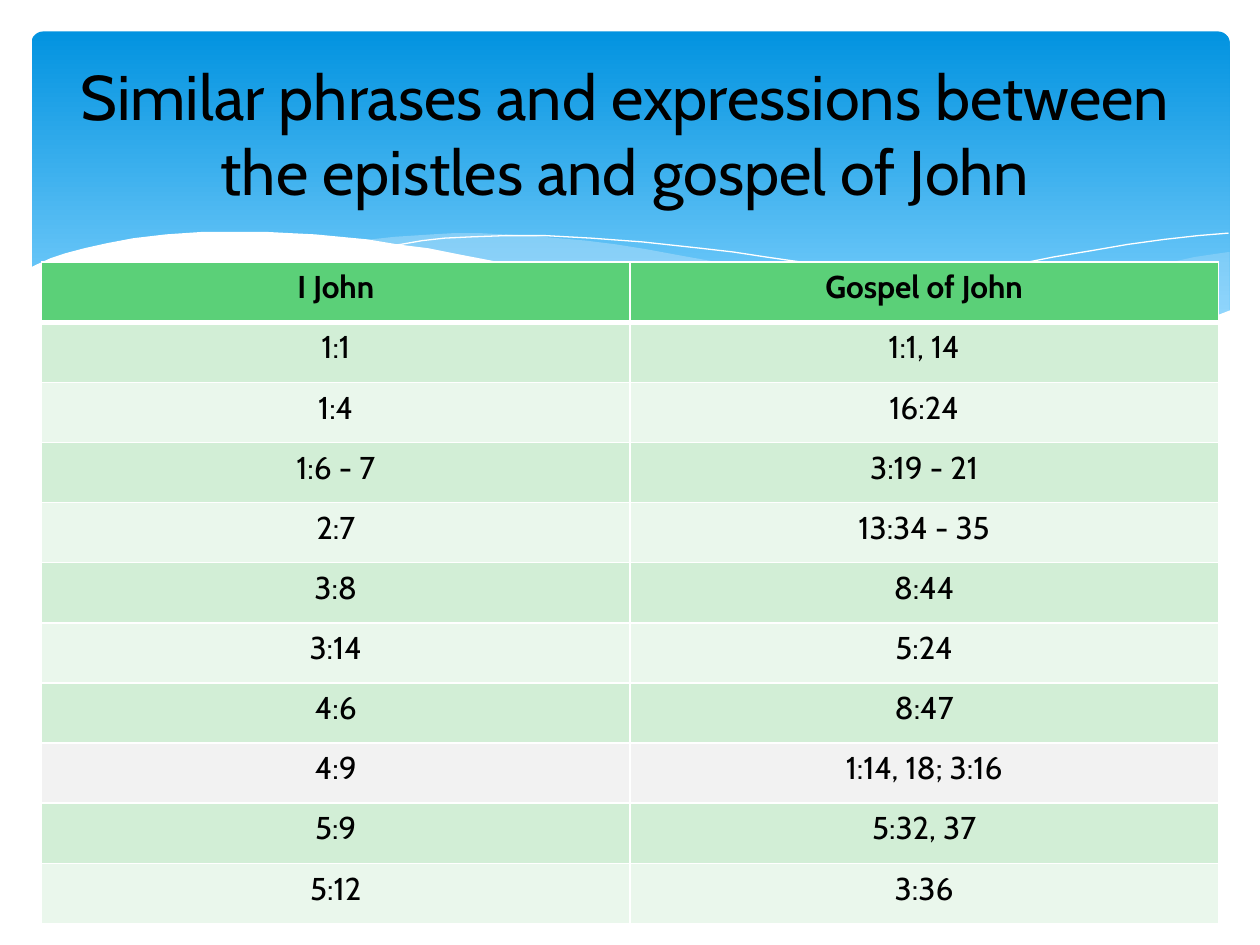
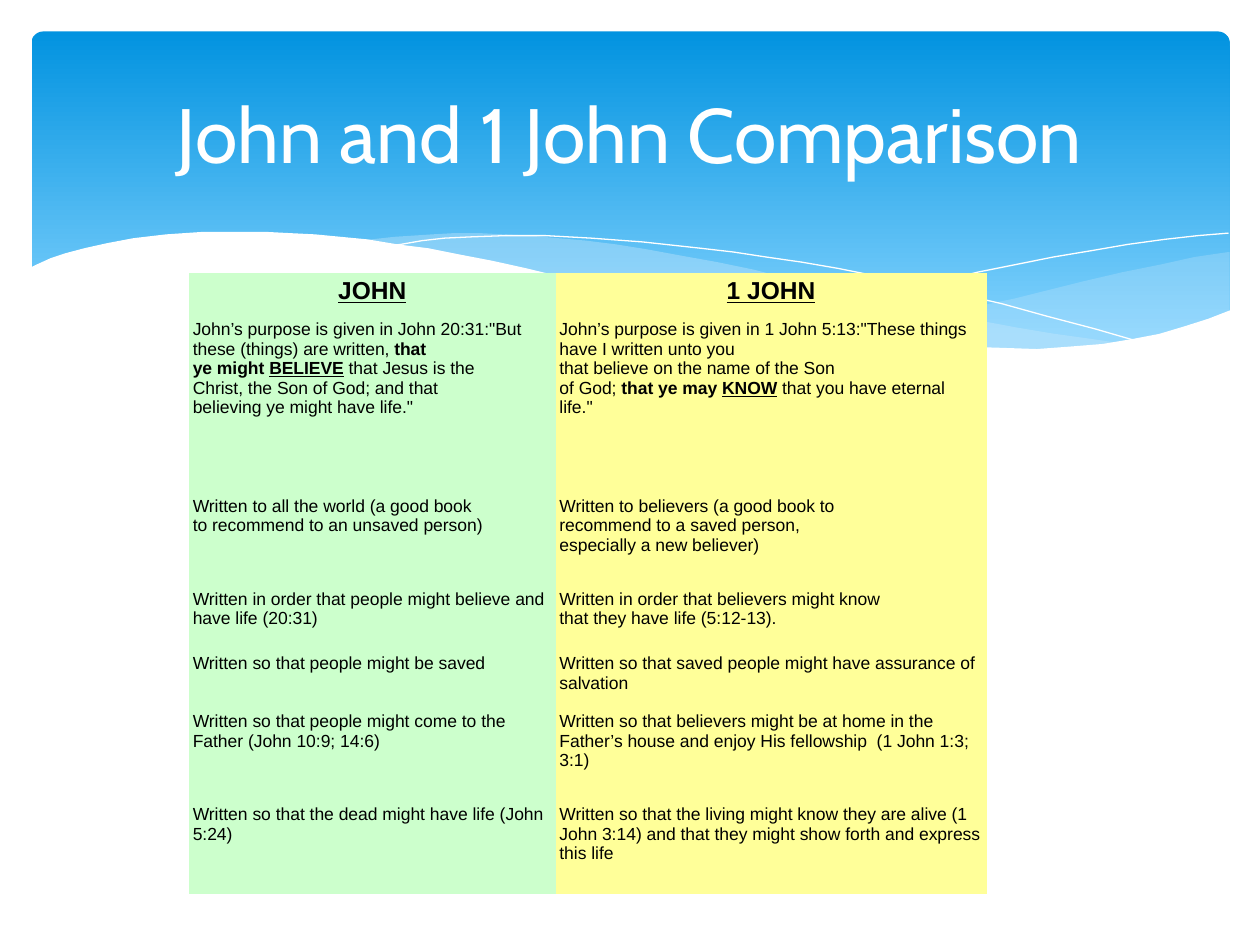
from copy import deepcopy
from dataclasses import dataclass

from lxml.etree import SubElement
from pptx import Presentation
from pptx.dml.color import RGBColor
from pptx.enum.shapes import MSO_SHAPE
from pptx.enum.text import MSO_ANCHOR, PP_ALIGN
from pptx.oxml.ns import qn
from pptx.util import Emu, Pt

PX = 9144
PLAIN_TABLE = "{2D5ABB26-0587-4C30-8999-92F81FD0307C}"


@dataclass(frozen=True)
class Theme:
    black: str = "000000"
    white: str = "FFFFFF"
    sky_top: str = "0293E0"
    sky_bottom: str = "83D3FE"
    mist: str = "C6E7FC"
    header_green: str = "5BD078"
    band_dark: str = "D2EED6"
    band_light: str = "EAF7EC"
    band_grey: str = "F2F2F2"
    john_green: str = "CCFFCC"
    epistle_yellow: str = "FFFF99"
    heading_font: str = "Cabin"
    reading_font: str = "Arial"
    long_title: int = 36
    short_title: int = 44
    verse_size: int = 18
    column_size: int = 14
    reading_size: int = 10


THEME = Theme()

RIGHT_SWELL = [
    (975, 200), (948, 204), (921, 210), (891, 216), (861, 223), (805, 237), (753, 248),
    (706, 257), (661, 265), (691, 269), (719, 272), (745, 275), (769, 277), (803, 278),
    (835, 277), (863, 275), (889, 272), (913, 267), (935, 262), (949, 257), (963, 252),
    (976, 247), (976, 200),
]
MIDDLE_SWELL = [
    (893, 273), (866, 269), (837, 265), (807, 260), (775, 254), (741, 247), (706, 240),
    (668, 231), (629, 222), (598, 214), (569, 208), (541, 203), (514, 198), (489, 194),
    (465, 191), (442, 189), (420, 187), (399, 186), (380, 185), (361, 185), (344, 186),
    (313, 188), (286, 191), (323, 196), (362, 203), (404, 211), (449, 222), (491, 232),
    (530, 240), (566, 248), (601, 255), (634, 261), (665, 266), (695, 270), (722, 274),
    (748, 276), (773, 277), (796, 278), (838, 278), (867, 276), (893, 273),
]
FALLING_LINE = [
    (309, 195), (318, 194), (335, 191), (353, 189), (374, 188), (401, 187), (433, 187),
    (469, 189), (510, 192), (556, 197), (582, 200), (608, 204), (636, 208), (665, 213),
    (695, 219), (727, 226), (760, 233), (795, 241), (831, 251), (869, 261), (907, 272),
]
RISING_LINE = [
    (613, 257), (653, 246), (695, 235), (748, 223), (776, 216), (806, 210), (836, 204),
    (866, 199), (895, 194), (924, 190), (951, 187), (975, 185),
]
WHITE_WAVE = [
    (977, 246), (959, 253), (940, 259), (920, 265), (899, 269), (875, 273), (850, 275),
    (823, 277), (793, 276), (761, 275), (726, 272), (688, 268), (648, 262), (603, 254),
    (555, 245), (503, 233), (447, 220), (418, 213), (391, 207), (365, 202), (340, 197),
    (316, 194), (292, 190), (271, 188), (250, 186), (230, 185), (211, 184), (161, 184),
    (132, 186), (106, 189), (85, 193), (67, 197), (52, 201), (40, 205), (29, 210),
    (23, 213), (23, 329), (977, 329),
]

VERSE_PAIRS = [
    ("I John", "Gospel of John"),
    ("1:1", "1:1, 14"),
    ("1:4", "16:24"),
    ("1:6 - 7", "3:19 - 21"),
    ("2:7", "13:34 - 35"),
    ("3:8", "8:44"),
    ("3:14", "5:24"),
    ("4:6", "8:47"),
    ("4:9", "1:14, 18; 3:16"),
    ("5:9", "5:32, 37"),
    ("5:12", "3:36"),
]
GREY_ROW = 8

PURPOSES = [
    (
        [
            ("John’s purpose is given in John 20:31:\"But these (things) are written, ", ""),
            ("that\nye might ", "b"),
            ("BELIEVE", "bu"),
            (" that Jesus is the\nChrist, the Son of God; and that\n"
             "believing ye might have life.\"", ""),
        ],
        [
            ("John’s purpose is given in 1 John 5:13:\"These things have I written unto you\n"
             "that believe on the name of the Son\nof God; ", ""),
            ("that ye may ", "b"),
            ("KNOW", "bu"),
            (" that you have eternal life.\"", ""),
        ],
    ),
    (
        [("Written to all the world (a good book\nto recommend to an unsaved person)", "")],
        [("Written to believers (a good book to\nrecommend to a saved person,\n"
          "especially a new believer)", "")],
    ),
    (
        [("Written in order that people might believe and have life (20:31)", "")],
        [("Written in order that believers might know\nthat they have life (5:12-13).", "")],
    ),
    (
        [("Written so that people might be saved", "")],
        [("Written so that saved people might have assurance of salvation", "")],
    ),
    (
        [("Written so that people might come to the Father (John 10:9; 14:6)", "")],
        [("Written so that believers might be at home in the Father’s house and enjoy "
          "His fellowship  (1 John 1:3; 3:1)", "")],
    ),
    (
        [("Written so that the dead might have life (John 5:24)", "")],
        [("Written so that the living might know they are alive (1 John 3:14) and that "
          "they might show forth and express this life", "")],
    ),
]
PURPOSE_COLUMNS = [291, 342]
PURPOSE_ROWS = [34, 140, 74, 51, 46, 74, 74]


def px(length):
    return Emu(length * PX)


def color(code):
    return RGBColor.from_string(code)


def add_spans(para, spans, font, size, ink):
    for text, style in spans:
        for number, line in enumerate(text.split("\n")):
            if number:
                para.add_line_break()
                para._p[-1].append(deepcopy(span._r.rPr))
            span = para.add_run()
            span.text = line
            span.font.name = font
            span.font.size = Pt(size)
            span.font.color.rgb = color(ink)
            span.font.bold = "b" in style
            span.font.underline = "u" in style


def add_title(page, text, left, width, size, ink):
    box = page.shapes.add_textbox(px(left), px(37), px(width), px(137))
    frame = box.text_frame
    frame.word_wrap = True
    frame.vertical_anchor = MSO_ANCHOR.MIDDLE
    para = frame.paragraphs[0]
    para.alignment = PP_ALIGN.CENTER
    add_spans(para, [(text, "")], THEME.heading_font, size, ink)


def add_outline(page, points, closed):
    builder = page.shapes.build_freeform(*points[0], scale=PX)
    builder.add_line_segments(points[1:], close=closed)
    shape = builder.convert_to_shape()
    shape.shadow.inherit = False
    return shape


def add_swell(page, points, fill, opacity=100):
    shape = add_outline(page, points, True)
    shape.line.fill.background()
    shape.fill.solid()
    shape.fill.fore_color.rgb = color(fill)
    if opacity < 100:
        paint = shape._element.spPr.find(qn("a:solidFill"))[0]
        SubElement(paint, qn("a:alpha"), val=str(opacity * 1000))


def add_thin_curve(page, points):
    shape = add_outline(page, points, False)
    shape.fill.background()
    shape.line.color.rgb = color(THEME.white)
    shape.line.width = Pt(0)


def add_sky(page):
    sky = page.shapes.add_shape(
        MSO_SHAPE.ROUNDED_RECTANGLE, px(25), px(25), px(951), px(270))
    sky.adjustments[0] = 0.034
    sky.shadow.inherit = False
    sky.line.fill.background()
    sky.fill.gradient()
    sky.fill.gradient_angle = 270
    stops = [(0, THEME.sky_top), (0.9, THEME.sky_bottom)]
    for stop, (position, code) in zip(sky.fill.gradient_stops, stops):
        stop.position = position
        stop.color.rgb = color(code)


def add_page(deck):
    page = deck.slides.add_slide(deck.slide_layouts[6])
    add_sky(page)
    add_swell(page, RIGHT_SWELL, THEME.mist, 29)
    add_swell(page, MIDDLE_SWELL, THEME.mist, 40)
    add_thin_curve(page, FALLING_LINE)
    add_thin_curve(page, RISING_LINE)
    add_swell(page, WHITE_WAVE, THEME.white)
    return page


def add_plain_table(page, rows, left, top, width, height):
    table = page.shapes.add_table(
        rows, 2, px(left), px(top), px(width), px(height)).table
    table.first_row = False
    table.horz_banding = False
    table._tbl.tblPr.find(qn("a:tableStyleId")).text = PLAIN_TABLE
    return table


def set_borders(cell, **widths):
    properties = cell._tc.get_or_add_tcPr()
    for side, width in widths.items():
        line = SubElement(properties, qn(f"a:ln{side}"), w=str(Pt(width)))
        paint = SubElement(line, qn("a:solidFill"))
        SubElement(paint, qn("a:srgbClr"), val=THEME.white)


def fill_cell(cell, spans, fill, font, size, centered):
    cell.fill.solid()
    cell.fill.fore_color.rgb = color(fill)
    para = cell.text_frame.paragraphs[0]
    para.alignment = PP_ALIGN.CENTER if centered else PP_ALIGN.LEFT
    add_spans(para, spans, font, size, THEME.black)


def verse_fill(row):
    if row == 0:
        return THEME.header_green
    if row == GREY_ROW:
        return THEME.band_grey
    return THEME.band_dark if row % 2 else THEME.band_light


def add_verse_table(page):
    table = add_plain_table(page, len(VERSE_PAIRS), 33, 208, 934, 525)
    for row, pair in enumerate(VERSE_PAIRS):
        for column, verse in enumerate(pair):
            cell = table.cell(row, column)
            set_borders(cell, L=1, R=1, T=3 if row == 1 else 1, B=1 if row else 3)
            fill_cell(cell, [(verse, "" if row else "b")], verse_fill(row),
                      THEME.heading_font, THEME.verse_size, True)


def add_purpose_table(page):
    rows = [([("JOHN", "bu")], [("1 JOHN", "bu")])] + PURPOSES
    table = add_plain_table(
        page, len(rows), 150, 217, sum(PURPOSE_COLUMNS), sum(PURPOSE_ROWS))
    for column, width in zip(table.columns, PURPOSE_COLUMNS):
        column.width = px(width)
    for row, height in zip(table.rows, PURPOSE_ROWS):
        row.height = px(height)
    fills = [THEME.john_green, THEME.epistle_yellow]
    for row, pair in enumerate(rows):
        size = THEME.reading_size if row else THEME.column_size
        for column, spans in enumerate(pair):
            cell = table.cell(row, column)
            cell.margin_left = cell.margin_right = px(3)
            cell.margin_top = cell.margin_bottom = px(3)
            fill_cell(cell, spans, fills[column], THEME.reading_font, size, row == 0)


def main():
    deck = Presentation()
    deck.slide_width, deck.slide_height = px(1000), px(750)

    page = add_page(deck)
    add_verse_table(page)
    add_title(page, "Similar phrases and expressions between the epistles and gospel of John",
              17, 958, THEME.long_title, THEME.black)

    page = add_page(deck)
    add_title(page, "John and 1 John Comparison", 50, 900, THEME.short_title, THEME.white)
    add_purpose_table(page)

    deck.save("out.pptx")


if __name__ == "__main__":
    main()
